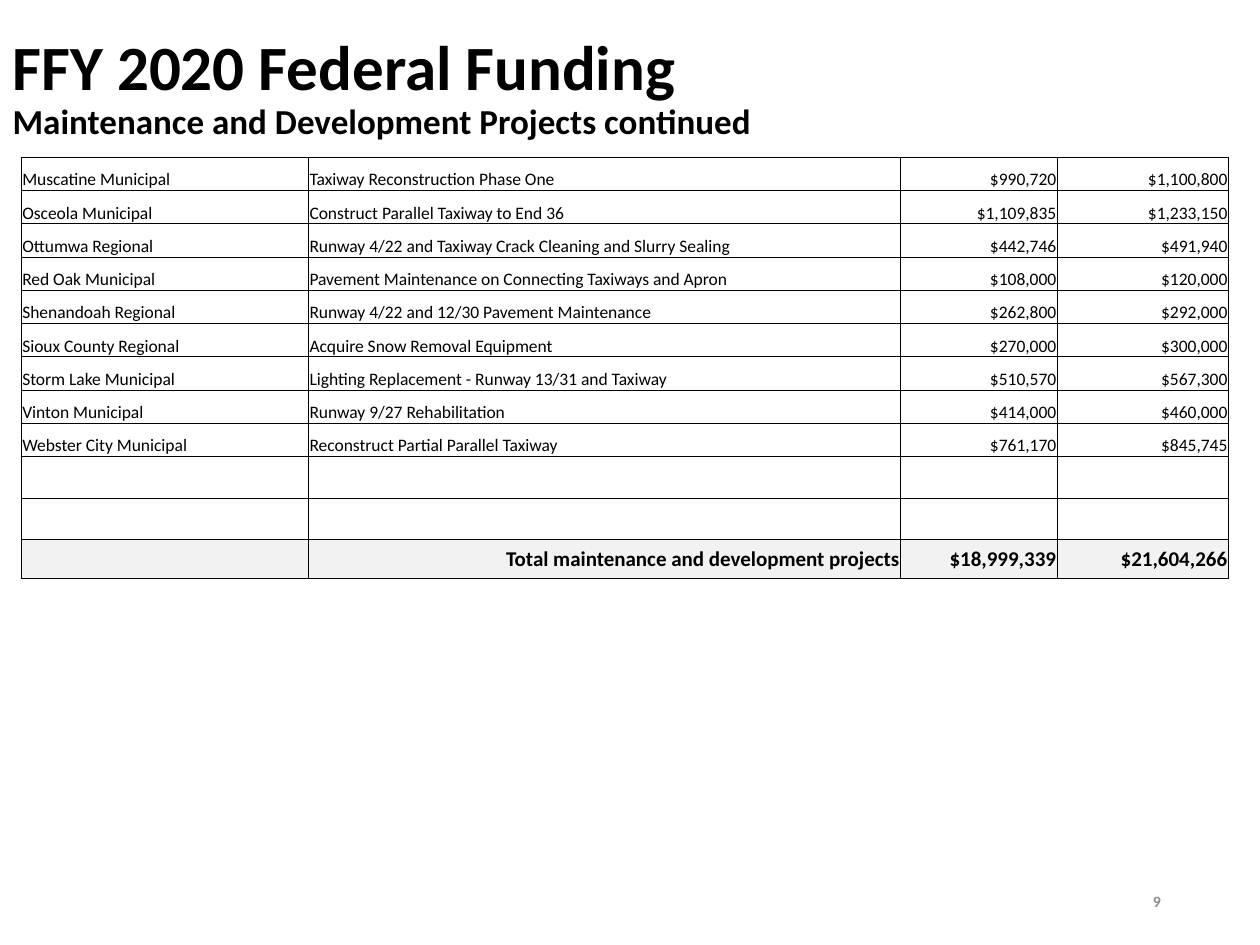
from lxml import etree
from pptx import Presentation
from pptx.dml.color import RGBColor
from pptx.enum.text import MSO_ANCHOR, PP_ALIGN
from pptx.oxml.ns import qn
from pptx.util import Cm, Pt

LEFT, RIGHT = PP_ALIGN.LEFT, PP_ALIGN.RIGHT
MIDDLE, BOTTOM = MSO_ANCHOR.MIDDLE, MSO_ANCHOR.BOTTOM
TITLE_ONLY = 5
COLORS = {"text": "000000", "page": "8C8C8C", "cell": "FFFFFF", "total": "F2F2F2"}


def add_text(paragraph, text, size=10, color="text", bold=False, align=LEFT):
    paragraph.alignment = align
    run = paragraph.add_run()
    run.text = text
    run.font.name = "Calibri"
    run.font.size = Pt(size)
    run.font.bold = bold
    run.font.color.rgb = RGBColor.from_string(COLORS[color])


def add_borders(cell, color, width=Pt(0.5)):
    properties = cell._tc.get_or_add_tcPr()
    for position, side in enumerate(("a:lnL", "a:lnR", "a:lnT", "a:lnB")):
        line = etree.Element(qn(side), w=str(width))
        fill = etree.SubElement(line, qn("a:solidFill"))
        etree.SubElement(fill, qn("a:srgbClr"), val=color)
        properties.insert(position, line)


prs = Presentation()
prs.slide_width, prs.slide_height = Cm(25.4), Cm(19.05)
slide = prs.slides.add_slide(prs.slide_layouts[TITLE_ONLY])

# Title with subtitle line
title = slide.shapes.title
title.left, title.top, title.width, title.height = Cm(0), Cm(0.43), Cm(24.56), Cm(2.74)
title.text_frame.vertical_anchor = MIDDLE
heading = title.text_frame.paragraphs[0]
heading.line_spacing = 0.9
add_text(heading, "FFY 2020 Federal Funding", size=36, bold=True)
heading.add_line_break()
add_text(heading, "Maintenance and Development Projects continued", size=20, bold=True)

# Page number
page = slide.shapes.add_textbox(Cm(17.93), Cm(17.65), Cm(5.72), Cm(1.02)).text_frame
page.word_wrap = True
page.vertical_anchor = MIDDLE
add_text(page.paragraphs[0], "9", size=9, color="page", bold=True, align=RIGHT)

# Projects: airport, work, federal share, total cost
projects = [
    ("Muscatine Municipal", "Taxiway Reconstruction Phase One", "$990,720", "$1,100,800"),
    ("Osceola Municipal", "Construct Parallel Taxiway to End 36", "$1,109,835", "$1,233,150"),
    ("Ottumwa Regional", "Runway 4/22 and Taxiway Crack Cleaning and Slurry Sealing",
     "$442,746", "$491,940"),
    ("Red Oak Municipal", "Pavement Maintenance on Connecting Taxiways and Apron",
     "$108,000", "$120,000"),
    ("Shenandoah Regional", "Runway 4/22 and 12/30 Pavement Maintenance",
     "$262,800", "$292,000"),
    ("Sioux County Regional", "Acquire Snow Removal Equipment", "$270,000", "$300,000"),
    ("Storm Lake Municipal", "Lighting Replacement - Runway 13/31 and Taxiway",
     "$510,570", "$567,300"),
    ("Vinton Municipal", "Runway 9/27 Rehabilitation", "$414,000", "$460,000"),
    ("Webster City Municipal", "Reconstruct Partial Parallel Taxiway", "$761,170", "$845,745"),
]
spare = [("",) * 4] * 2
total = ("", "Total maintenance and development projects", "$18,999,339", "$21,604,266")
rows = projects + spare + [total]
row_heights = [0.67] * len(projects) + [0.84] * len(spare) + [0.78]
column_widths = [5.79, 11.94, 3.15, 3.45]

# Funding table
funding = slide.shapes.add_table(
    len(rows), len(column_widths), Cm(0.43), Cm(3.17),
    Cm(sum(column_widths)), Cm(sum(row_heights))).table
funding.first_row = funding.horz_banding = False
for column, width in zip(funding.columns, column_widths):
    column.width = Cm(width)
for row, height, values in zip(funding.rows, row_heights, rows):
    row.height = Cm(height)
    is_total = values is total
    for index, (cell, value) in enumerate(zip(row.cells, values)):
        cell.margin_left = cell.margin_right = cell.margin_top = Cm(0.02)
        cell.margin_bottom = Cm(0)
        cell.vertical_anchor = MIDDLE if is_total else BOTTOM
        cell.fill.solid()
        cell.fill.fore_color.rgb = RGBColor.from_string(COLORS["total" if is_total else "cell"])
        add_borders(cell, COLORS["text"])
        if value:
            add_text(cell.text_frame.paragraphs[0], value, size=12 if is_total else 10,
                     bold=is_total, align=RIGHT if is_total or index >= 2 else LEFT)

prs.save("out.pptx")
